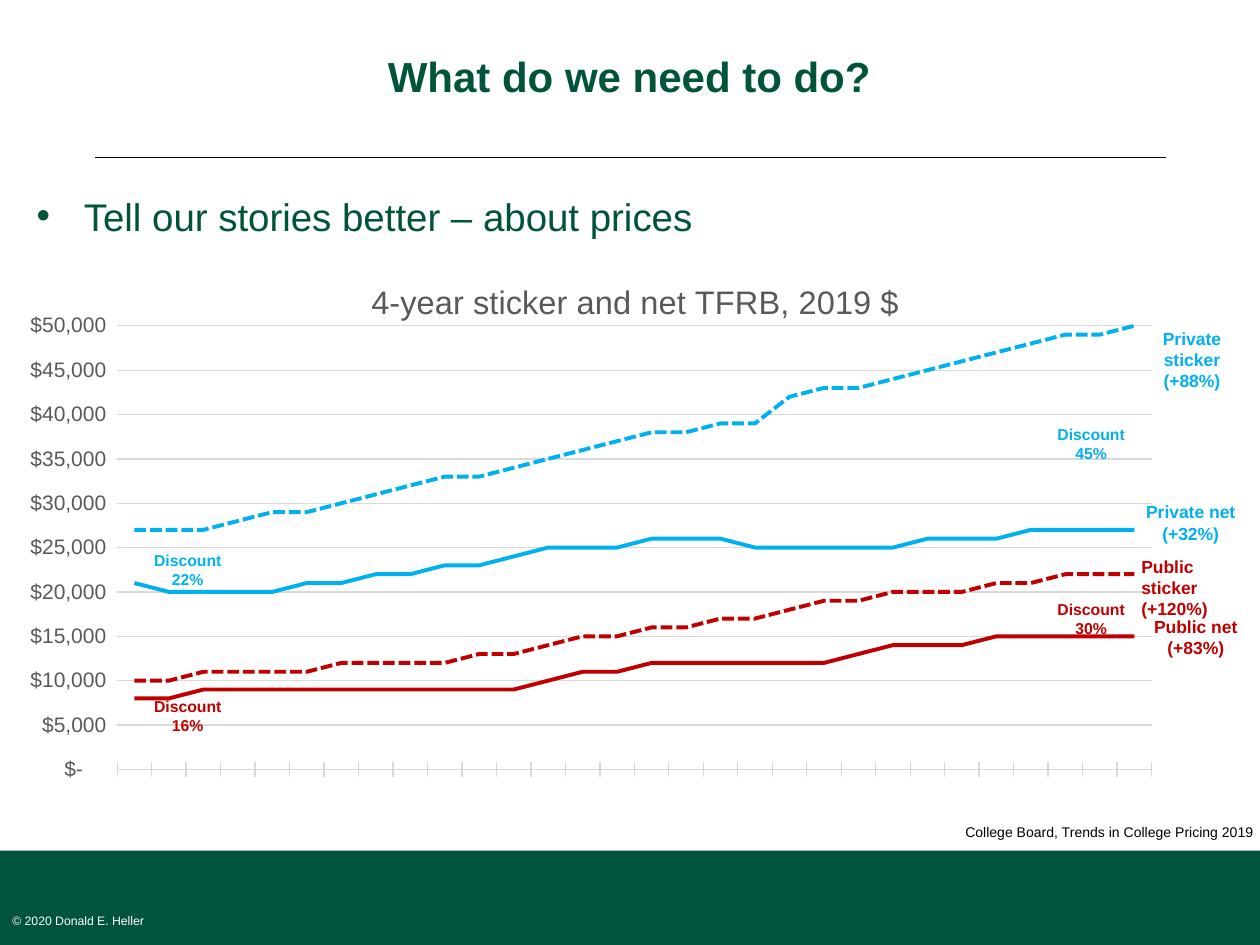
from lxml.etree import SubElement
from pptx import Presentation
from pptx.chart.data import CategoryChartData
from pptx.dml.color import RGBColor
from pptx.enum.chart import XL_CHART_TYPE as ChartType, XL_TICK_LABEL_POSITION as LabelPosition
from pptx.enum.chart import XL_TICK_MARK as TickMark
from pptx.enum.dml import MSO_LINE as Dash
from pptx.enum.shapes import MSO_CONNECTOR as Connector, MSO_SHAPE as Shape
from pptx.enum.text import MSO_ANCHOR as Anchor, MSO_AUTO_SIZE as AutoSize, PP_ALIGN as Align
from pptx.oxml import parse_xml
from pptx.oxml.ns import nsdecls, qn
from pptx.util import Pt

FONT = "Arial"
COLORS = {
    "green": "00543C",
    "white": "FFFFFF",
    "black": "000000",
    "private": "00B0F0",
    "public": "C00000",
    "grid": "D9D9D9",
    "axis": "595959",
}
DOLLARS = '_("$"* #,##0_);_("$"* \\(#,##0\\);_("$"* "-"??_);_(@_)'
YEARS = [str(year) for year in range(1990, 2020)]
SERIES = [
    ("Public sticker", "public", True,
     [10, 10, 11, 11, 11, 11, 12, 12, 12, 12, 13, 13, 14, 15, 15,
      16, 16, 17, 17, 18, 19, 19, 20, 20, 20, 21, 21, 22, 22, 22]),
    ("Public net", "public", False,
     [8, 8, 9, 9, 9, 9, 9, 9, 9, 9, 9, 9, 10, 11, 11,
      12, 12, 12, 12, 12, 12, 13, 14, 14, 14, 15, 15, 15, 15, 15]),
    ("Private sticker", "private", True,
     [27, 27, 27, 28, 29, 29, 30, 31, 32, 33, 33, 34, 35, 36, 37,
      38, 38, 39, 39, 42, 43, 43, 44, 45, 46, 47, 48, 49, 49, 50]),
    ("Private net", "private", False,
     [21, 20, 20, 20, 20, 21, 21, 22, 22, 23, 23, 24, 25, 25, 25,
      26, 26, 26, 25, 25, 25, 25, 25, 26, 26, 26, 27, 27, 27, 27]),
]
SERIES_LABELS = [
    (644.4, 283, "private", ["Private net", "(+32%)"], Align.CENTER),
    (645.1, 313.9, "public", ["Public sticker", "(+120%)"], Align.LEFT),
    (647.3, 348.5, "public", ["Public net", "(+83%)"], Align.CENTER),
    (645.1, 183.6, "private", ["Private sticker", "(+88%)"], Align.CENTER),
]
DISCOUNT_LABELS = [
    (71.3, 311, "private", "Discount 22%"),
    (587.5, 239, "private", "Discount 45%"),
    (71.3, 394.6, "public", "Discount 16%"),
    (587.5, 339.1, "public", "Discount 30%"),
]


def rgb(color):
    return RGBColor.from_string(COLORS[color])


def style_font(font, size, color, bold=False):
    font.name = FONT
    font.size = Pt(size)
    font.bold = bold
    font.color.rgb = rgb(color)


def add_run(paragraph, text, size, color, bold=False):
    run = paragraph.add_run()
    run.text = text
    style_font(run.font, size, color, bold)


def place(shape, left, top, width, height):
    shape.left, shape.top = Pt(left), Pt(top)
    shape.width, shape.height = Pt(width), Pt(height)


def clear_margins(frame):
    frame.auto_size = AutoSize.NONE
    frame.margin_left = frame.margin_top = frame.margin_right = frame.margin_bottom = 0


def add_text(slide, box, lines, size, color, bold=False, alignments=(Align.LEFT,), wrap=False):
    frame = slide.shapes.add_textbox(*map(Pt, box)).text_frame
    frame.word_wrap = wrap
    for index, line in enumerate(lines):
        paragraph = frame.add_paragraph() if index else frame.paragraphs[0]
        paragraph.alignment = alignments[index]
        add_run(paragraph, line, size, color, bold)


def add_footer(slide):
    band = slide.shapes.add_shape(Shape.RECTANGLE, 0, Pt(486), Pt(720), Pt(54))
    band.shadow.inherit = False
    band.fill.solid()
    band.fill.fore_color.rgb = rgb("green")
    band.line.fill.background()
    add_text(slide, (0, 518.4, 147.6, 15.8), ["© 2020 Donald E. Heller"], 7, "white", wrap=True)


def add_rule(slide):
    rule = slide.shapes.add_connector(Connector.STRAIGHT, Pt(666), Pt(90), Pt(54), Pt(90))
    rule.line.color.rgb = rgb("black")
    rule.line.width = Pt(0.5)
    SubElement(rule._element.spPr, qn("a:effectLst"))


def fill_title(title, text):
    place(title, 54, 9.4, 611.3, 67)
    frame = title.text_frame
    clear_margins(frame)
    frame.vertical_anchor = Anchor.MIDDLE
    paragraph = frame.paragraphs[0]
    paragraph.alignment = Align.CENTER
    paragraph.line_spacing = Pt(30)
    add_run(paragraph, text, 24, "green", True)


def fill_body(body, text):
    place(body, 20.9, 104.4, 681.8, 374.4)
    clear_margins(body.text_frame)
    paragraph = body.text_frame.paragraphs[0]
    properties = paragraph._p.get_or_add_pPr()
    properties.set("marL", str(Pt(27)))
    properties.set("indent", str(Pt(-27)))
    paragraph.line_spacing = Pt(32)
    paragraph.space_before = Pt(0)
    SubElement(properties, qn("a:buFont"), typeface=FONT)
    SubElement(properties, qn("a:buChar"), char="•")
    add_run(paragraph, text, 22, "green")


def set_layout(parent, position, **values):
    for old in parent.findall(qn("c:layout")):
        parent.remove(old)
    entries = "".join(f'<c:{name} val="{value}"/>' for name, value in values.items())
    parent.insert(position, parse_xml(
        f'<c:layout {nsdecls("c")}><c:manualLayout>{entries}</c:manualLayout></c:layout>'))


def format_axes(chart):
    value_axis = chart.value_axis
    value_axis.minimum_scale, value_axis.maximum_scale = 0, 50000
    value_axis.major_unit = 5000
    value_axis.major_tick_mark = TickMark.NONE
    value_axis.format.line.fill.background()
    value_axis.tick_labels.number_format = DOLLARS
    value_axis.tick_labels.number_format_is_linked = False
    style_font(value_axis.tick_labels.font, 12, "axis")
    category_axis = chart.category_axis
    category_axis.major_tick_mark = TickMark.CROSS
    category_axis.tick_label_position = LabelPosition.NONE
    for line in (value_axis.major_gridlines.format.line, category_axis.format.line):
        line.color.rgb = rgb("grid")
        line.width = Pt(0.75)


def add_price_chart(slide):
    data = CategoryChartData()
    data.categories = YEARS
    for name, _, _, thousands in SERIES:
        data.add_series(name, [value * 1000 for value in thousands])
    chart = slide.shapes.add_chart(
        ChartType.LINE, 0, Pt(144), Pt(720), Pt(319.7), data).chart
    style_font(chart.font, 10, "black")
    chart.has_legend = False
    chart.has_title = True
    title = chart.chart_title
    add_run(title.text_frame.paragraphs[0], "4-year sticker and net TFRB, 2019 $", 18.6, "axis")
    title.include_in_layout = False
    set_layout(title._element, 1, xMode="edge", yMode="edge", x=0.29, y=0.04)
    set_layout(chart._chartSpace.chart.plotArea, 0, layoutTarget="inner",
               xMode="edge", yMode="edge", x=0.093, y=0.132, w=0.821, h=0.793)
    format_axes(chart)
    chart.plots[0].vary_by_categories = False
    for series, (_, color, dashed, _) in zip(chart.plots[0].series, SERIES):
        series.smooth = False
        series.format.line.color.rgb = rgb(color)
        series.format.line.width = Pt(2.25)
        if dashed:
            series.format.line.dash_style = Dash.SQUARE_DOT


def add_labels(slide):
    for left, top, color, lines, first in SERIES_LABELS:
        add_text(slide, (left, top, 72, 32.4), lines, 10, color, True, (first, Align.CENTER))
    for left, top, color, text in DISCOUNT_LABELS:
        add_text(slide, (left, top, 72, 32.4), [text], 9, color, True, (Align.CENTER,))
    add_text(slide, (542.2, 467.3, 181.4, 17.3),
             ["College Board, Trends in College Pricing 2019"], 8, "black",
             alignments=(Align.RIGHT,))


def main():
    presentation = Presentation()
    presentation.slide_width, presentation.slide_height = Pt(720), Pt(540)
    slide = presentation.slides.add_slide(presentation.slide_layouts[1])
    fill_title(slide.shapes.title, "What do we need to do?")
    fill_body(slide.placeholders[1], "Tell our stories better – about prices")
    add_footer(slide)
    add_rule(slide)
    add_price_chart(slide)
    add_labels(slide)
    presentation.save("out.pptx")


if __name__ == "__main__":
    main()
